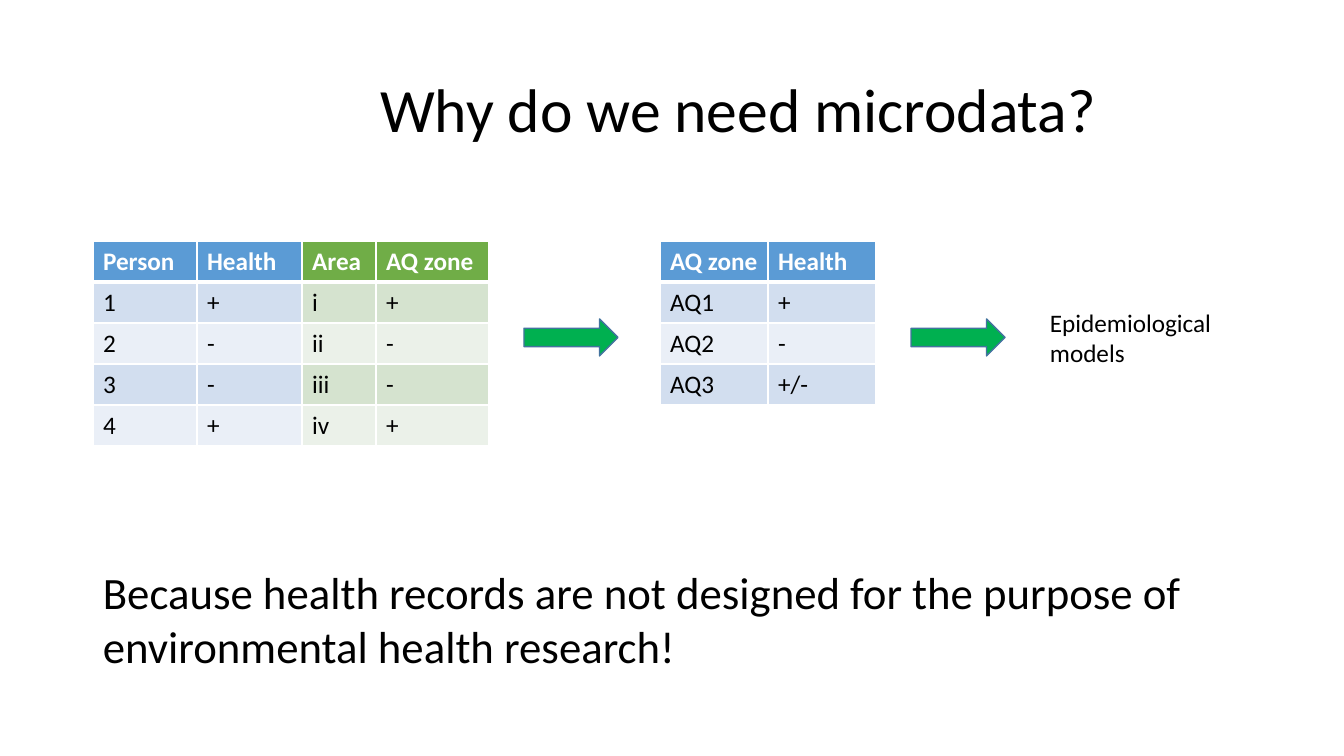
from dataclasses import dataclass

import pptx
import pptx.dml.color
import pptx.enum.shapes
import pptx.enum.text
import pptx.oxml
import pptx.oxml.ns
import pptx.util

EMU_PER_PX = 914400 / 100.8


@dataclass(frozen=True)
class Theme:
    font: str = "Calibri"
    text: str = "000000"
    white: str = "FFFFFF"
    arrow: str = "00B050"
    arrow_line: str = "43739E"
    title_size: int = 44
    message_size: int = 32
    small_size: int = 18
    blue: tuple[str, str, str] = ("5B9BD5", "D2DEEF", "EAEFF7")
    green: tuple[str, str, str] = ("70AD47", "D5E3CF", "EBF1E9")


@dataclass(frozen=True)
class Box:
    x: int
    y: int
    w: int
    h: int


@dataclass(frozen=True)
class Grid:
    x: int
    widths: tuple[int, ...]
    shades: tuple[str, str, str]
    rows: tuple[tuple[str, ...], ...]


@dataclass(frozen=True)
class Note:
    box: Box
    text: str
    size: int


THEME = Theme()
TABLE_TOP = 241
ROW_HEIGHT = 41
TITLE = Note(Box(226, 40, 1025, 146), "Why do we need microdata?", THEME.title_size)
GRIDS = (
    Grid(93, (104, 105), THEME.blue,
         (("Person", "Health"), ("1", "+"), ("2", "-"), ("3", "-"), ("4", "+"))),
    Grid(660, (108, 108), THEME.blue,
         (("AQ zone", "Health"), ("AQ1", "+"), ("AQ2", "-"), ("AQ3", "+/-"))),
    Grid(302, (74, 113), THEME.green,
         (("Area", "AQ zone"), ("i", "+"), ("ii", "-"), ("iii", "-"), ("iv", "+"))),
)
ARROWS = (Box(524, 319, 94, 37), Box(911, 319, 94, 37))
NOTES = (
    Note(Box(1040, 302, 196, 72), "Epidemiological models", THEME.small_size),
    Note(Box(93, 560, 1143, 119),
         "Because health records are not designed for the purpose of "
         "environmental health research!", THEME.message_size),
)


def px(n: int) -> pptx.util.Emu:
    return pptx.util.Emu(round(n * EMU_PER_PX))


def frame(box: Box) -> tuple[pptx.util.Emu, ...]:
    return px(box.x), px(box.y), px(box.w), px(box.h)


def rgb(value: str) -> pptx.dml.color.RGBColor:
    return pptx.dml.color.RGBColor.from_string(value)


def write(p, text: str, size: int, color: str = THEME.text, bold: bool = False) -> None:
    r = p.add_run()
    r.text = text
    r.font.name = THEME.font
    r.font.size = pptx.util.Pt(size)
    r.font.bold = bold
    r.font.color.rgb = rgb(color)


def add_borders(cell, header: bool) -> None:
    tcPr = cell._tc.get_or_add_tcPr()
    for side in "LRTB":
        width = pptx.util.Pt(3 if header and side == "B" else 1)
        tcPr.append(pptx.oxml.parse_xml(
            f'<a:ln{side} {pptx.oxml.ns.nsdecls("a")} w="{width}"><a:solidFill>'
            f'<a:srgbClr val="{THEME.white}"/></a:solidFill></a:ln{side}>'))


def draw_title(s, note: Note) -> None:
    sp = s.shapes.title
    sp.left, sp.top, sp.width, sp.height = frame(note.box)
    tf = sp.text_frame
    tf.auto_size = pptx.enum.text.MSO_AUTO_SIZE.NONE
    tf.vertical_anchor = pptx.enum.text.MSO_ANCHOR.MIDDLE
    p = tf.paragraphs[0]
    p.alignment = pptx.enum.text.PP_ALIGN.CENTER
    p.line_spacing = 0.9
    write(p, note.text, note.size)


def draw_grid(s, grid: Grid) -> None:
    box = Box(grid.x, TABLE_TOP, sum(grid.widths), ROW_HEIGHT * len(grid.rows))
    table = s.shapes.add_table(len(grid.rows), len(grid.widths), *frame(box)).table
    for column, width in zip(table.columns, grid.widths):
        column.width = px(width)
    head, odd, even = grid.shades
    for i, values in enumerate(grid.rows):
        table.rows[i].height = px(ROW_HEIGHT)
        header = i == 0
        fill = head if header else (odd if i % 2 else even)
        color = THEME.white if header else THEME.text
        for j, value in enumerate(values):
            cell = table.cell(i, j)
            add_borders(cell, header)
            cell.fill.solid()
            cell.fill.fore_color.rgb = rgb(fill)
            write(cell.text_frame.paragraphs[0], value, THEME.small_size, color, header)


def draw_arrow(s, box: Box) -> None:
    sp = s.shapes.add_shape(pptx.enum.shapes.MSO_SHAPE.RIGHT_ARROW, *frame(box))
    sp.shadow.inherit = False
    sp.fill.solid()
    sp.fill.fore_color.rgb = rgb(THEME.arrow)
    sp.line.color.rgb = rgb(THEME.arrow_line)
    sp.line.width = pptx.util.Pt(1)


def draw_note(s, note: Note) -> None:
    tf = s.shapes.add_textbox(*frame(note.box)).text_frame
    tf.word_wrap = True
    tf.auto_size = pptx.enum.text.MSO_AUTO_SIZE.SHAPE_TO_FIT_TEXT
    write(tf.paragraphs[0], note.text, note.size)


def main() -> None:
    prs = pptx.Presentation()
    prs.slide_width, prs.slide_height = px(1344), px(756)
    s = prs.slides.add_slide(prs.slide_layouts[5])
    draw_title(s, TITLE)
    for grid in GRIDS:
        draw_grid(s, grid)
    for arrow in ARROWS:
        draw_arrow(s, arrow)
    for note in NOTES:
        draw_note(s, note)
    prs.save("out.pptx")


if __name__ == "__main__":
    main()
